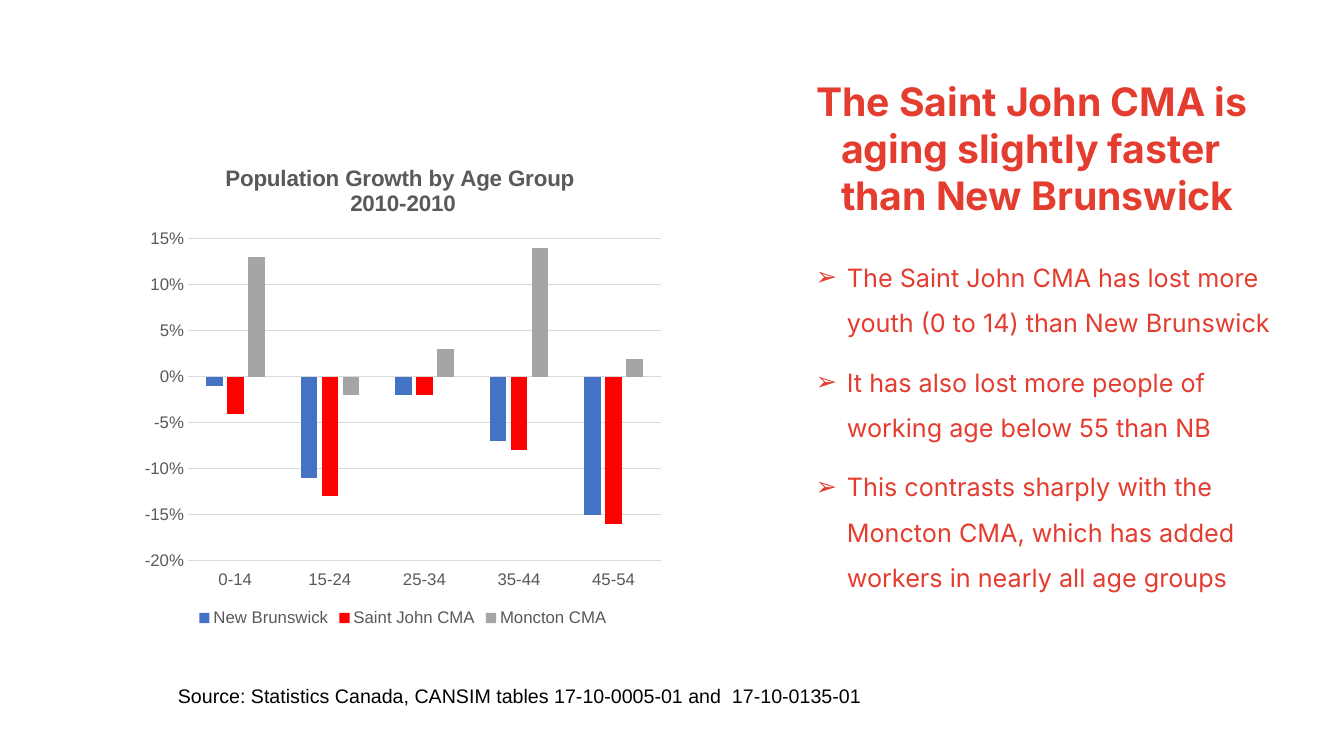
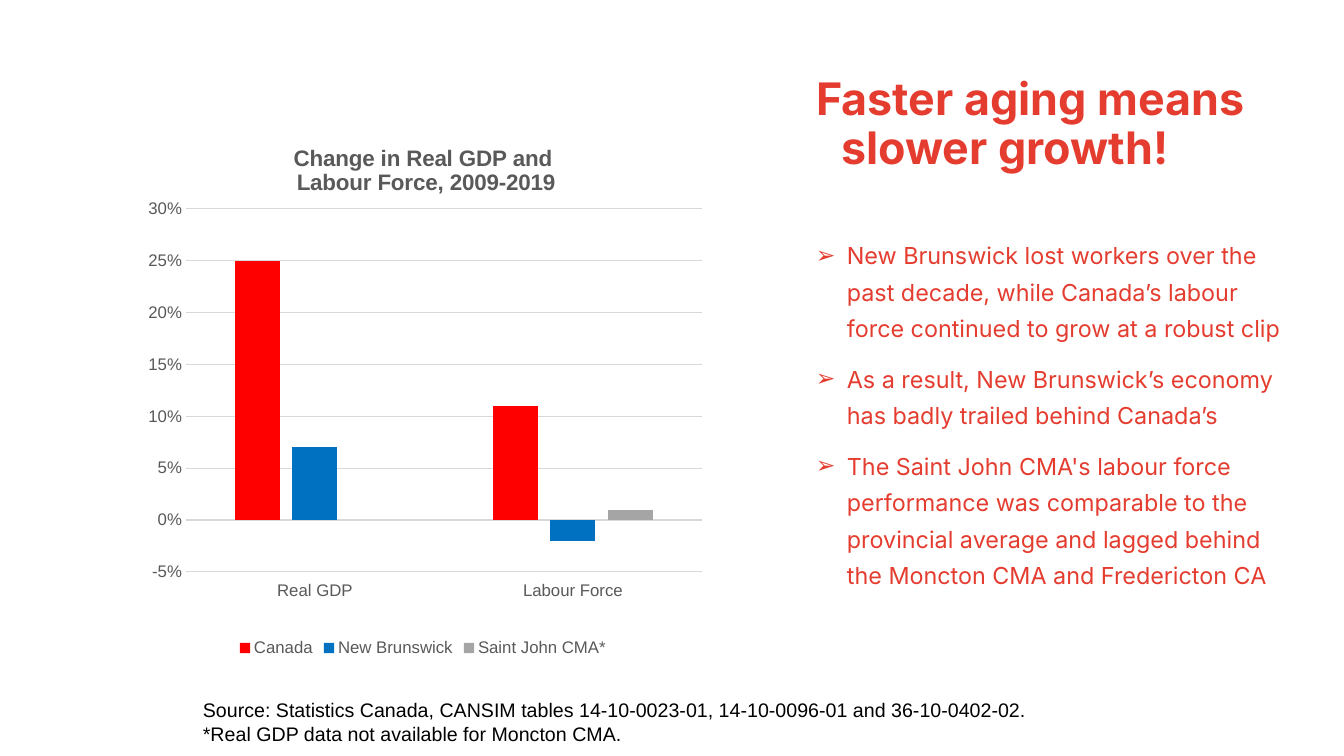
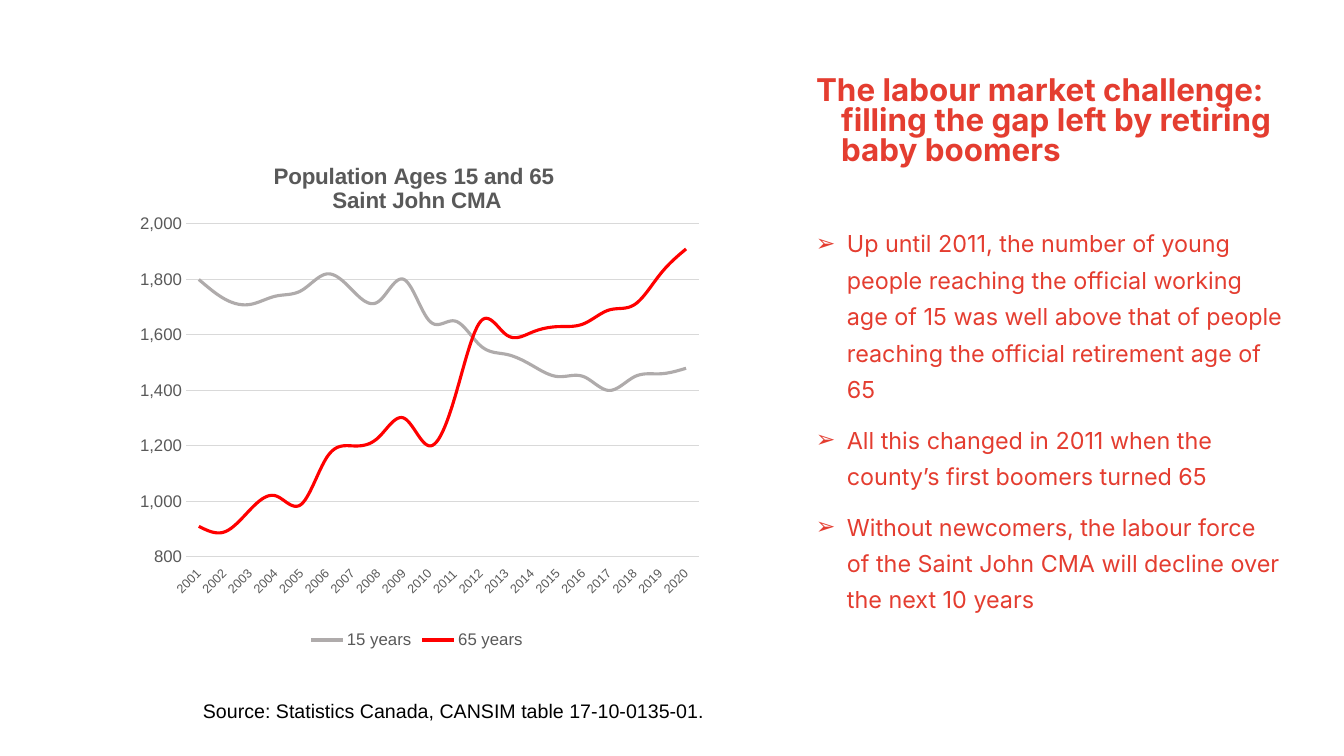
from lxml import etree
from pptx import Presentation, util as u
from pptx.chart.data import CategoryChartData
from pptx.dml.color import RGBColor
from pptx.enum import chart as charts, text
from pptx.oxml.ns import qn

COLOURS = {
    "accent": "E43D30",
    "source": "000000",
    "label": "595959",
    "grid": "D9D9D9",
    "blue": "4472C4",
    "deep_blue": "0070C0",
    "red": "FF0000",
    "grey": "A5A5A5",
    "warm_grey": "AFABAB",
}
HEADING_FONT, PLAIN_FONT = "Inter", "Arial"
PANEL_LEFT, PANEL_TOP, PANEL_WIDTH = 780, 72, 513
EMU_PER_PX = 914400 / 100.8


def px(length):
    return u.Emu(round(length * EMU_PER_PX))


def colour(name):
    return RGBColor.from_string(COLOURS[name])


def style_font(font, size, shade, name=PLAIN_FONT, bold=False):
    font.size, font.name, font.bold = u.Pt(size), name, bold
    font.color.rgb = colour(shade)


class Deck:
    """Shared style and the slide being built."""

    def __init__(self):
        self.deck = Presentation()
        self.deck.slide_width, self.deck.slide_height = px(1344), px(756)
        self.page = None

    def new_page(self):
        self.page = self.deck.slides.add_slide(self.deck.slide_layouts[5])

    def hang(self, para, margin, indent):
        properties = para._p.get_or_add_pPr()
        properties.set("marL", str(px(margin)))
        properties.set("indent", str(px(indent)))
        return properties

    def title(self, words, height, size, spacing):
        box = self.page.shapes.title
        box.left, box.top = px(PANEL_LEFT), px(PANEL_TOP)
        box.width, box.height = px(PANEL_WIDTH), px(height)
        frame = box.text_frame
        frame.text = words
        frame.word_wrap = True
        frame.auto_size = text.MSO_AUTO_SIZE.NONE
        frame.vertical_anchor = text.MSO_ANCHOR.TOP
        para = frame.paragraphs[0]
        self.hang(para, 51, -25)
        para.alignment = text.PP_ALIGN.LEFT
        para.line_spacing = spacing
        style_font(para.runs[0].font, size, "accent", HEADING_FONT, True)

    def text_box(self, left, top, width, height, lines):
        box = self.page.shapes.add_textbox(px(left), px(top), px(width), px(height))
        frame = box.text_frame
        frame.word_wrap = True
        frame.text = "\n".join(lines)
        return frame

    def bullets(self, top, height, size, spacing, lines):
        frame = self.text_box(PANEL_LEFT, top, PANEL_WIDTH, height, lines)
        for index, para in enumerate(frame.paragraphs):
            properties = self.hang(para, 57, -31)
            shade = etree.SubElement(properties, qn("a:buClr"))
            etree.SubElement(shade, qn("a:srgbClr"), val=COLOURS["accent"])
            etree.SubElement(properties, qn("a:buFont"), typeface=PLAIN_FONT)
            etree.SubElement(properties, qn("a:buChar"), char="➢")
            para.line_spacing = spacing
            para.space_before = u.Pt(10 if index else 0)
            style_font(para.runs[0].font, size, "accent", HEADING_FONT)

    def source(self, left, top, width, height, lines):
        frame = self.text_box(left, top, width, height, lines)
        frame.auto_size = text.MSO_AUTO_SIZE.SHAPE_TO_FIT_TEXT
        for para in frame.paragraphs:
            style_font(para.runs[0].font, 14, "source")

    def chart(self, kind, place, heading, categories, series, scale, number_format, plot):
        """series: (name, colour, values); scale: (low, high, step); plot: inner area in px."""
        data = CategoryChartData(number_format=number_format)
        data.categories = categories
        for name, _, values in series:
            data.add_series(name, values)
        frame = self.page.shapes.add_chart(kind, *map(px, place), data)
        chart = frame.chart
        style_font(chart.font, 12, "label")
        self.chart_heading(chart, heading)
        self.chart_axes(chart, scale, number_format)
        self.plot_area(chart, plot, place[2:])
        chart.has_legend = True
        chart.legend.position = charts.XL_LEGEND_POSITION.BOTTOM
        chart.legend.include_in_layout = False
        style_font(chart.legend.font, 12, "label")

        # Series
        drawn = chart.plots[0]
        drawn.vary_by_categories = False
        is_line = kind == charts.XL_CHART_TYPE.LINE
        if not is_line:
            drawn.gap_width, drawn.overlap = 219, -27
        for item, (_, shade, _) in zip(drawn.series, series):
            if is_line:
                item.smooth = True
                item.format.line.width = u.Pt(2.25)
                item.format.line.color.rgb = colour(shade)
            else:
                item.invert_if_negative = False
                item.format.fill.solid()
                item.format.fill.fore_color.rgb = colour(shade)
        return chart

    def chart_heading(self, chart, heading):
        chart.has_title = True
        frame = chart.chart_title.text_frame
        frame.text = heading
        chart.chart_title.include_in_layout = False
        for para in frame.paragraphs:
            style_font(para.runs[0].font, 16, "label", bold=True)

    def chart_axes(self, chart, scale, number_format):
        for axis in (chart.category_axis, chart.value_axis):
            axis.major_tick_mark = axis.minor_tick_mark = charts.XL_TICK_MARK.NONE
            style_font(axis.tick_labels.font, 12, "label")
        across, upright = chart.category_axis, chart.value_axis
        across.tick_label_position = charts.XL_TICK_LABEL_POSITION.LOW
        upright.minimum_scale, upright.maximum_scale, upright.major_unit = scale
        upright.tick_labels.number_format = number_format
        upright.tick_labels.number_format_is_linked = False
        upright.format.line.fill.background()
        upright.has_major_gridlines = True
        for line in (across.format.line, upright.major_gridlines.format.line):
            line.width = u.Pt(0.75)
            line.color.rgb = colour("grid")

    def plot_area(self, chart, plot, chart_size):
        area = chart._chartSpace.chart.plotArea
        for old in area.findall(qn("c:layout")):
            area.remove(old)
        layout = etree.Element(qn("c:layout"))
        area.insert(0, layout)
        manual = etree.SubElement(layout, qn("c:manualLayout"))
        settings = [("layoutTarget", "inner"), ("xMode", "edge"), ("yMode", "edge")]
        shares = [length / whole for length, whole in zip(plot, chart_size * 2)]
        for tag, value in settings + list(zip("xywh", shares)):
            etree.SubElement(manual, qn("c:" + tag), val=str(value))

    def tilt_categories(self, chart, size):
        chart.category_axis.tick_labels.font.size = u.Pt(size)
        body = chart.category_axis._element.txPr.find(qn("a:bodyPr"))
        body.set("rot", str(-45 * 60000))
        body.set("vert", "horz")


def main():
    deck = Deck()
    columns = charts.XL_CHART_TYPE.COLUMN_CLUSTERED

    # Population growth by age group
    deck.new_page()
    deck.title("The Saint John CMA is aging slightly faster than New Brunswick", 169, 28, 1.0)
    deck.bullets(242, 436, 18, 1.5, [
        "The Saint John CMA has lost more youth (0 to 14) than New Brunswick",
        "It has also lost more people of working age below 55 than NB",
        "This contrasts sharply with the Moncton CMA, which has added workers "
        "in nearly all age groups",
    ])
    deck.source(168, 679, 824, 34, [
        "Source: Statistics Canada, CANSIM tables 17-10-0005-01 and  17-10-0135-01"])
    deck.chart(
        columns, (134, 147, 538, 484), "Population Growth by Age Group \n2010-2010",
        ["0-14", "15-24", "25-34", "35-44", "45-54"],
        [("New Brunswick", "blue", [-0.01, -0.11, -0.02, -0.07, -0.15]),
         ("Saint John CMA", "red", [-0.04, -0.13, -0.02, -0.08, -0.16]),
         ("Moncton CMA", "grey", [0.13, -0.02, 0.03, 0.14, 0.02])],
        (-0.2, 0.15, 0.05), "0%", (54, 92, 473, 322))

    # Real GDP and labour force
    deck.new_page()
    deck.title("Faster aging means slower growth!", 131, 32, 0.9)
    deck.bullets(228, 433, 16.7, 1.3, [
        "New Brunswick lost workers over the past decade, while Canada’s labour force "
        "continued to grow at a robust clip",
        "As a result, New Brunswick’s economy has badly trailed behind Canada’s",
        "The Saint John CMA's labour force performance was comparable to the provincial "
        "average and lagged behind the Moncton CMA and Fredericton CA",
    ])
    deck.source(193, 693, 943, 57, [
        "Source: Statistics Canada, CANSIM tables 14-10-0023-01, 14-10-0096-01 "
        "and 36-10-0402-02.",
        "*Real GDP data not available for Moncton CMA."])
    deck.chart(
        columns, (129, 125, 588, 536), "Change in Real GDP and\n Labour Force, 2009-2019",
        ["Real GDP", "Labour Force"],
        [("Canada", "red", [0.25, 0.11]),
         ("New Brunswick", "deep_blue", [0.07, -0.02]),
         ("Saint John CMA*", "grey", [None, 0.01])],
        (-0.05, 0.3, 0.05), "0%", (57, 84, 516, 363))

    # Population ages 15 and 65
    deck.new_page()
    deck.title("The labour market challenge: filling the gap left by retiring baby boomers",
               131, 22.4, 0.8)
    deck.bullets(216, 451, 16.7, 1.3, [
        "Up until 2011, the number of young people reaching the official working age of 15 "
        "was well above that of people reaching the official retirement age of 65",
        "All this changed in 2011 when the county’s first boomers turned 65",
        "Without newcomers, the labour force of the Saint John CMA will decline over "
        "the next 10 years",
    ])
    deck.source(193, 694, 943, 34, ["Source: Statistics Canada, CANSIM table 17-10-0135-01."])
    ages = deck.chart(
        charts.XL_CHART_TYPE.LINE, (120, 144, 594, 509),
        "Population Ages 15 and 65 \nSaint John CMA",
        [str(year) for year in range(2001, 2021)],
        [("15 years", "warm_grey",
          [1800, 1730, 1710, 1740, 1760, 1820, 1760, 1720, 1800, 1650,
           1650, 1560, 1530, 1490, 1450, 1450, 1400, 1450, 1460, 1480]),
         ("65 years", "red",
          [910, 890, 970, 1020, 990, 1160, 1200, 1230, 1300, 1200,
           1380, 1650, 1600, 1610, 1630, 1640, 1690, 1710, 1820, 1910])],
        (800, 2000, 200), "#,##0", (66, 80, 513, 333))
    deck.tilt_categories(ages, 9)

    deck.deck.save("out.pptx")


if __name__ == "__main__":
    main()
